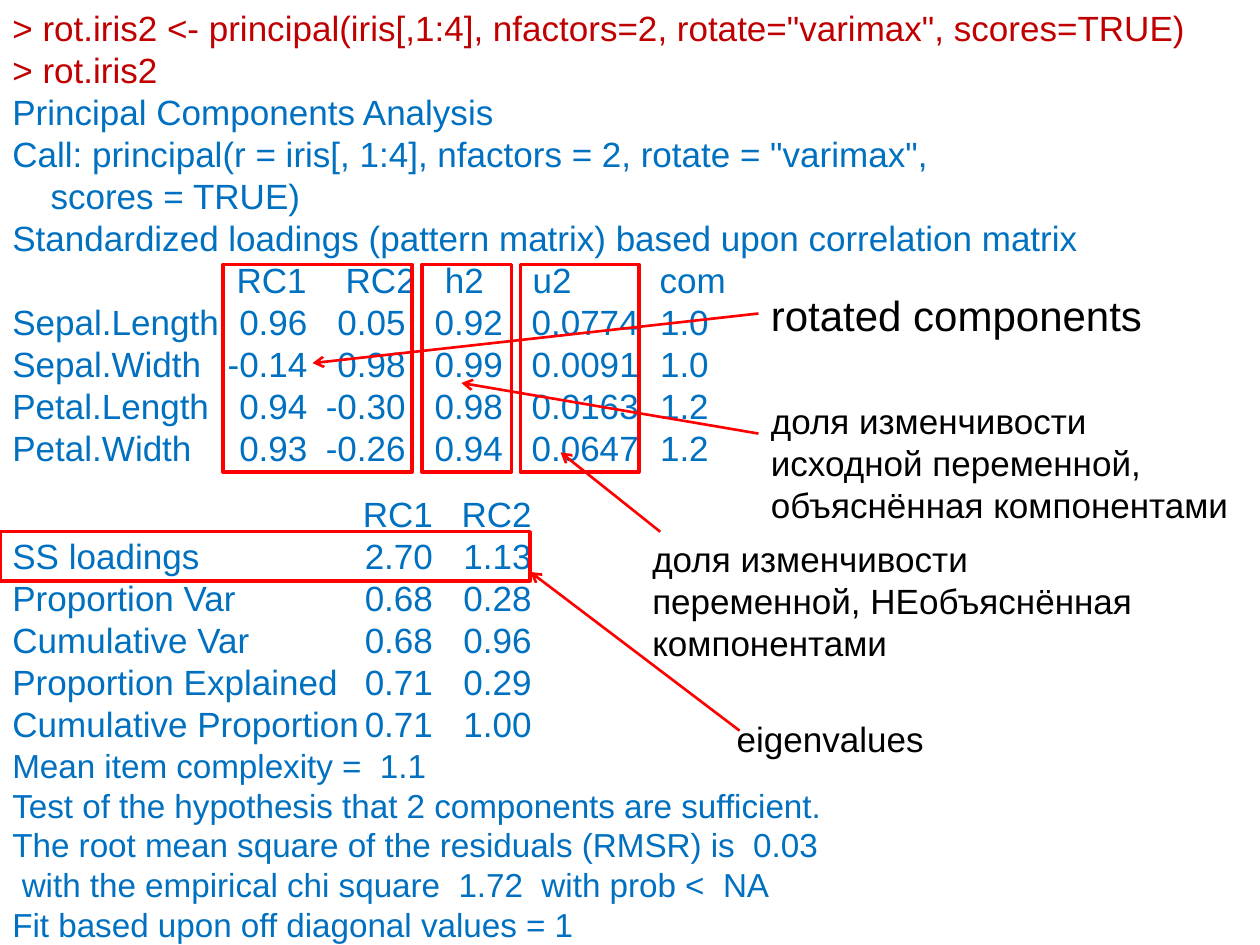
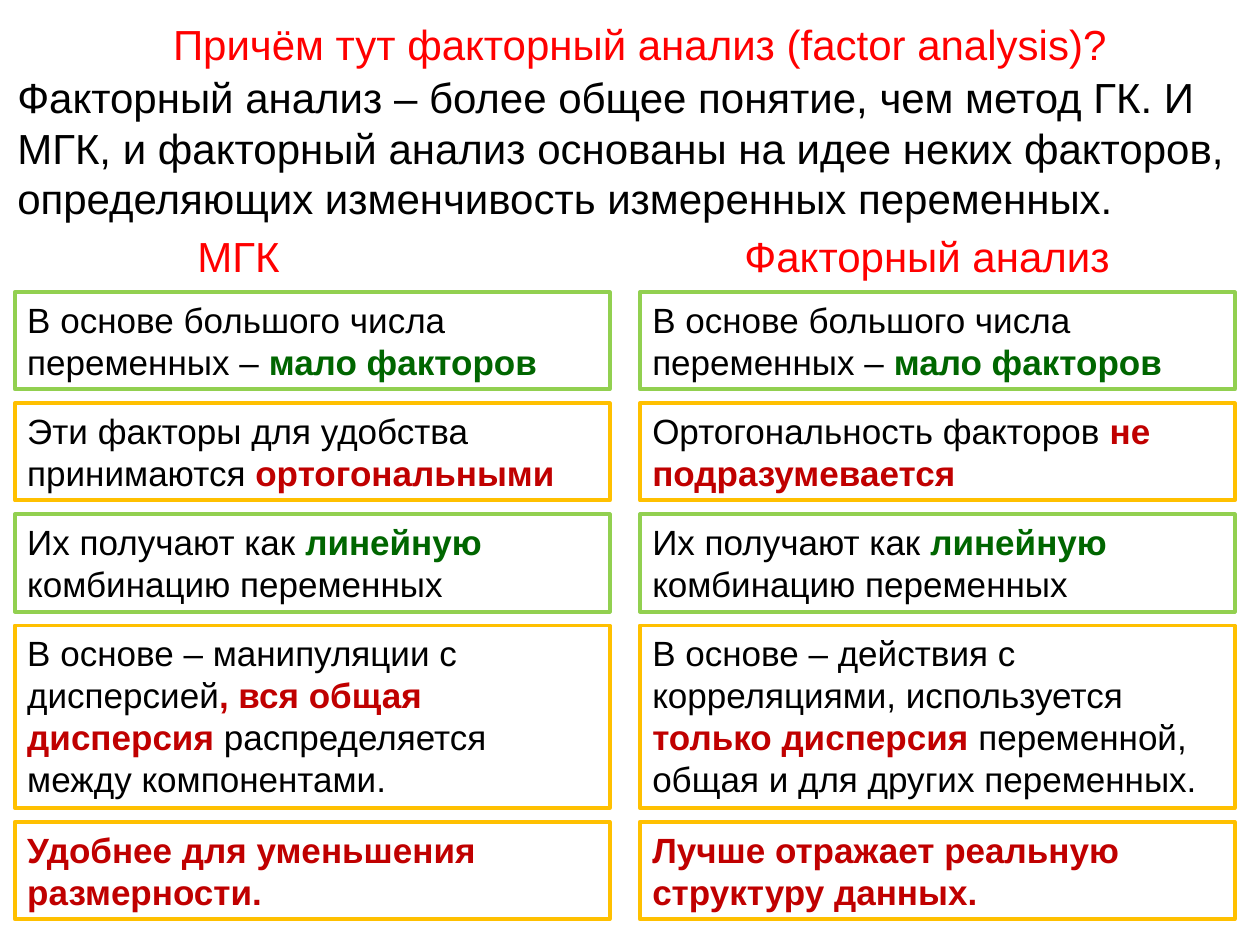
"""Build two slides on rotated components and factor analysis."""
from lxml.etree import SubElement
from pptx import Presentation
from pptx.dml.color import RGBColor as Rgb
from pptx.enum.shapes import MSO_CONNECTOR as Conn, MSO_SHAPE as Shape
from pptx.enum.text import MSO_ANCHOR as Anchor, PP_ALIGN as Align
from pptx.oxml.ns import qn
from pptx.util import Cm, Pt

FONT = "Arial"
HUES = {
    "black": "000000", "red": "FF0000", "dark": "C00000", "blue": "0070C0",
    "green": "006600", "lime": "92D050", "gold": "FFC000",
}

INPUT = [
    '> rot.iris2 <- principal(iris[,1:4], nfactors=2, rotate="varimax", scores=TRUE)',
    "> rot.iris2",
]
CALL = [
    "Principal Components Analysis",
    'Call: principal(r = iris[, 1:4], nfactors = 2, rotate = "varimax",',
]
MORE = ["scores = TRUE)"]
INTRO = ["Standardized loadings (pattern matrix) based upon correlation matrix"]
HEAD = [("", "RC1", "RC2", "h2", "u2", "com")]
LOADS = [
    ("Sepal.Length", "0.96", "0.05", "0.92", "0.0774", "1.0"),
    ("Sepal.Width", "-0.14", "0.98", "0.99", "0.0091", "1.0"),
    ("Petal.Length", "0.94", "-0.30", "0.98", "0.0163", "1.2"),
    ("Petal.Width", "0.93", "-0.26", "0.94", "0.0647", "1.2"),
]
SUMS_HEAD = [("", "RC1", "RC2")]
SUMS = [
    ("SS loadings", "2.70", "1.13"),
    ("Proportion Var", "0.68", "0.28"),
    ("Cumulative Var", "0.68", "0.96"),
    ("Proportion Explained", "0.71", "0.29"),
    ("Cumulative Proportion", "0.71", "1.00"),
]
TESTS = [
    "Mean item complexity =  1.1",
    "Test of the hypothesis that 2 components are sufficient.",
    "The root mean square of the residuals (RMSR) is  0.03",
]
CHI = ["with the empirical chi square  1.72  with prob <  NA"]
FIT = ["Fit based upon off diagonal values = 1"]

HEAD_TABS = ("l", (4.52, 6.72, 8.72, 10.49, 13.05))
LOAD_TABS = ("r", (5.95, 7.93, 9.89, 12.63, 14.04))
SUM_TABS = ("r", (8.48, 10.47))
PARTS = [
    (INPUT, {"hue": "dark"}), (CALL, {}), (MORE, {"indent": 0.77}), (INTRO, {}),
    (HEAD, {"tabs": HEAD_TABS}), (LOADS, {"tabs": LOAD_TABS}),
    (SUMS_HEAD, {"tabs": SUM_TABS, "gap": 14}), (SUMS, {"tabs": SUM_TABS}),
    (TESTS, {"size": 19}), (CHI, {"size": 19, "indent": 0.19}), (FIT, {"size": 19}),
]
FRAMES = [
    (4.5, 5.33, 3.81, 4.19), (8.51, 5.33, 1.8, 4.19),
    (10.49, 5.33, 2.39, 4.19), (0, 10.72, 10.69, 0.99),
]
LABELS = [
    ("rotated components", (15.29, 5.72, 9, 1.27), 24),
    ("доля изменчивости исходной переменной, объяснённая компонентами",
     (15.29, 7.92, 10.11, 2.82), 20),
    ("доля изменчивости переменной, НЕобъяснённая компонентами",
     (12.9, 10.72, 10.8, 2.82), 20),
    ("eigenvalues", (14.6, 14.33, 10.8, 1.12), 20),
]
ARROWS = [
    (15.29, 6.32, 6.3, 7.32), (15.29, 8.74, 9.3, 7.72),
    (13.31, 10.72, 11.3, 9.12), (14.91, 14.73, 10.69, 11.53),
]

TITLE = "Причём тут факторный анализ (factor analysis)?"
LEAD = ("Факторный анализ – более общее понятие, чем метод ГК. И МГК, и факторный "
        "анализ основаны на идее неких факторов, определяющих изменчивость "
        "измеренных переменных.")
NAMES = [("МГК", 4.81), ("Факторный анализ", 18.69)]
SAME = "В основе большого числа переменных – *мало факторов*"
LINEAR = "Их получают как *линейную *комбинацию переменных"
ROWS = [
    ("lime", "green", 1.96, SAME, SAME),
    ("gold", "dark", 1.96, "Эти факторы для удобства принимаются *ортогональными*",
     "Ортогональность факторов *не подразумевается*"),
    ("lime", "green", 1.96, LINEAR, LINEAR),
    ("gold", "dark", 3.68,
     "В основе – манипуляции с дисперсией*, вся общая дисперсия *"
     "распределяется между компонентами.",
     "В основе – действия с корреляциями, используется *только дисперсия *"
     "переменной, общая и для других переменных."),
    ("gold", "dark", 1.96, "*Удобнее для уменьшения размерности.*",
     "*Лучше отражает реальную структуру данных.*"),
]
LEFTS = (0.3, 12.9)
WIDE, TOP, GAP = 11.99, 5.89, 0.28


def tint(hue):
    return Rgb.from_string(HUES[hue])


def style(run, size, hue, bold=False):
    font = run.font
    font.name, font.size, font.bold = FONT, Pt(size), bold
    font.color.rgb = tint(hue)


def write(para, text, size, hue="black", bold_hue="black"):
    """Write text, with the parts between asterisks in bold."""
    for i, part in enumerate(text.split("*")):
        if part:
            run = para.add_run()
            run.text = part
            style(run, size, bold_hue if i % 2 else hue, bool(i % 2))


def label(slide, text, box, size, hue="black", align=Align.LEFT):
    frame = slide.shapes.add_textbox(*map(Cm, box)).text_frame
    frame.word_wrap = True
    para = frame.paragraphs[0]
    para.alignment = align
    write(para, text, size, hue)


def frame_box(slide, box, hue, width):
    shape = slide.shapes.add_shape(Shape.RECTANGLE, *map(Cm, box))
    shape.shadow.inherit = False
    shape.fill.background()
    shape.line.color.rgb = tint(hue)
    shape.line.width = Pt(width)
    return shape


def arrow(slide, ends):
    line = slide.shapes.add_connector(Conn.STRAIGHT, *map(Cm, ends))
    line.line.color.rgb = tint("red")
    line.line.width = Pt(1.5)
    SubElement(line.line._get_or_add_ln(), qn("a:tailEnd"), type="arrow")
    SubElement(line._element.spPr, qn("a:effectLst"))


def set_tabs(para, tabs):
    side, stops = tabs
    group = SubElement(para._p.get_or_add_pPr(), qn("a:tabLst"))
    for stop in stops:
        SubElement(group, qn("a:tab"), pos=str(Cm(stop)), algn=side)


def console(slide):
    frame = slide.shapes.add_textbox(0, 0, Cm(25.4), Cm(19.05)).text_frame
    frame.word_wrap = True
    para = frame.paragraphs[0]
    for lines, look in PARTS:
        for line in lines:
            if para.runs:
                para = frame.add_paragraph()
            para.space_before = Pt(look.get("gap", 0))
            if "indent" in look:
                para._p.get_or_add_pPr().set("marL", str(Cm(look["indent"])))
            if "tabs" in look:
                set_tabs(para, look["tabs"])
                line = "\t".join(line)
            write(para, line, look.get("size", 20), look.get("hue", "blue"))


def loadings(slide):
    console(slide)
    for box in FRAMES:
        frame_box(slide, box, "red", 2)
    for text, box, size in LABELS:
        label(slide, text, box, size)
    for ends in ARROWS:
        arrow(slide, ends)


def compare(slide):
    label(slide, TITLE, (2.6, 0.25, 20.6, 1.27), 24, "red", Align.CENTER)
    label(slide, LEAD, (0.1, 1.32, 25.3, 3.33), 24)
    for name, mid in NAMES:
        label(slide, name, (mid - 5, 4.52, 10, 1.27), 24, "red", Align.CENTER)
    top = TOP
    for edge, bold, high, *texts in ROWS:
        for left, text in zip(LEFTS, texts):
            frame = frame_box(slide, (left, top, WIDE, high), edge, 2.25).text_frame
            frame.word_wrap = True
            frame.vertical_anchor = Anchor.TOP
            para = frame.paragraphs[0]
            para.alignment = Align.LEFT
            write(para, text, 20, bold_hue=bold)
        top += high + GAP


def main():
    deck = Presentation()
    deck.slide_width, deck.slide_height = Cm(25.4), Cm(19.05)
    for build in (loadings, compare):
        build(deck.slides.add_slide(deck.slide_layouts[6]))
    deck.save("out.pptx")


if __name__ == "__main__":
    main()
